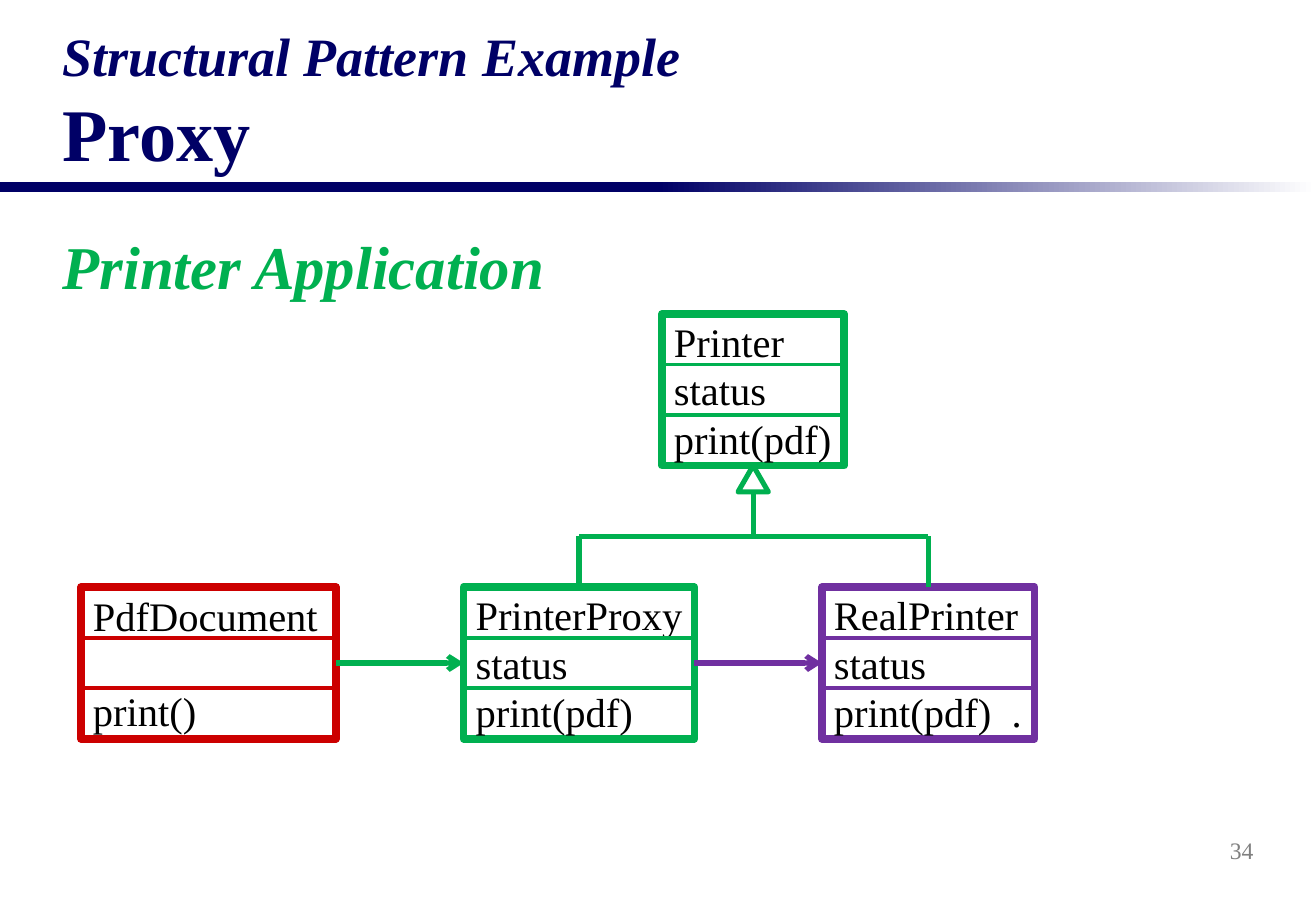
from dataclasses import dataclass

from pptx import Presentation
from pptx.dml.color import RGBColor
from pptx.enum.shapes import MSO_CONNECTOR as Connector, MSO_SHAPE as Shape
from pptx.enum.text import MSO_ANCHOR as Anchor, PP_ALIGN as Align
from pptx.oxml.ns import qn
from pptx.util import Inches, Pt
from lxml.etree import SubElement

TOP, LEFT, BOTTOM, RIGHT = range(4)  # connection sites of a rectangle


@dataclass(frozen=True)
class Theme:
    font: str = "Times New Roman"
    navy: str = "000066"
    white: str = "FFFFFF"
    black: str = "000000"
    gray: str = "808080"
    green: str = "00B050"
    purple: str = "7030A0"
    red: str = "CC0000"
    title: int = 44
    kicker: int = 32
    heading: int = 36
    body: int = 24
    number: int = 14
    border: float = 4.5
    link: float = 3
    divider: float = 2.25
    line_height: float = 1.15


class Diagram:
    """A slide laid out on a grid of 65 columns by 45 rows, six cells to the inch."""
    columns, rows, cell = 65, 45, Inches(1) / 6

    def __init__(self, theme):
        self.theme = theme
        self.presentation = Presentation()
        self.presentation.slide_width = self.grid(self.columns)
        self.presentation.slide_height = self.grid(self.rows)
        self.slide = self.presentation.slides.add_slide(self.presentation.slide_layouts[6])

    def grid(self, *cells):
        lengths = [round(count * self.cell) for count in cells]
        return lengths if len(lengths) > 1 else lengths[0]

    def set_text(self, paragraph, text, size, color, bold=False, italic=False):
        paragraph.text = text
        font = paragraph.font
        font.name, font.size, font.bold, font.italic = self.theme.font, Pt(size), bold, italic
        font.color.rgb = RGBColor.from_string(color)

    def text(self, area, lines, anchor=Anchor.TOP, align=Align.LEFT, before=0):
        frame = self.slide.shapes.add_textbox(*self.grid(*area)).text_frame
        frame.word_wrap, frame.vertical_anchor = True, anchor
        for index, line in enumerate(lines):
            paragraph = frame.add_paragraph() if index else frame.paragraphs[0]
            paragraph.alignment, paragraph.space_before = align, Pt(before)
            self.set_text(paragraph, **line)

    def shape(self, kind, area):
        shape = self.slide.shapes.add_shape(kind, *self.grid(*area))
        shape.shadow.inherit = False
        return shape

    def bar(self, area, start, end):
        bar = self.shape(Shape.RECTANGLE, area)
        bar.line.fill.background()
        bar.fill.gradient()
        bar.fill.gradient_angle = 0
        for stop, color in zip(bar.fill.gradient_stops, (start, end)):
            stop.color.rgb = RGBColor.from_string(color)

    def outline(self, kind, area, color, width):
        shape = self.shape(kind, area)
        shape.fill.background()
        shape.line.color.rgb = RGBColor.from_string(color)
        shape.line.width = Pt(width)
        return shape

    def line(self, start, end, color, width):
        line = self.slide.shapes.add_connector(
            Connector.STRAIGHT, *self.grid(*start), *self.grid(*end))
        line.line.color.rgb = RGBColor.from_string(color)
        line.line.width = Pt(width)
        SubElement(line._element.spPr, qn("a:effectLst"))
        return line

    def arrow(self, source, target, color):
        arrow = self.line((0, 0), (1, 1), color, self.theme.link)
        arrow.begin_connect(source, RIGHT)
        arrow.end_connect(target, LEFT)
        SubElement(arrow.line._get_or_add_ln(), qn("a:tailEnd"), type="arrow")

    def class_box(self, left, top, width, color, compartments):
        height = 7.5
        box = self.outline(Shape.RECTANGLE, (left, top, width, height), color, self.theme.border)
        frame = box.text_frame
        frame.word_wrap, frame.vertical_anchor = False, Anchor.MIDDLE
        skipped = 0
        paragraph = frame.paragraphs[0]
        for index, text in enumerate(compartments):
            if index:
                y = top + index * height / len(compartments)
                self.line((left, y), (left + width, y), color, self.theme.divider)
            if not text:  # an empty compartment becomes spacing
                skipped += 1
                continue
            if index:
                paragraph = frame.add_paragraph()
            paragraph.alignment = Align.LEFT
            paragraph.space_before = Pt(skipped * self.theme.body * self.theme.line_height)
            self.set_text(paragraph, text, self.theme.body, self.theme.black)
            skipped = 0
        return box

    def inheritance(self, parent, children, bar_row, color):
        def middle(box):
            return (box.left + box.width / 2) / self.cell

        center, top = middle(parent), (parent.top + parent.height) / self.cell
        width, height = 1.5, 1.3
        self.outline(Shape.ISOSCELES_TRIANGLE, (center - width / 2, top, width, height),
                     color, self.theme.link)
        self.line((center, top + height), (center, bar_row), color, self.theme.link)
        centers = [middle(child) for child in children]
        self.line((min(centers), bar_row), (max(centers), bar_row), color, self.theme.link)
        for child, x in zip(children, centers):
            branch = self.line((x, bar_row), (x, child.top / self.cell), color, self.theme.link)
            branch.end_connect(child, TOP)


def main():
    theme = Theme()
    diagram = Diagram(theme)

    # Header rule
    half = diagram.columns / 2
    diagram.bar((0, 9, half, 0.5), theme.navy, theme.navy)
    diagram.bar((half, 9, half, 0.5), theme.navy, theme.white)

    # Titles and page number
    diagram.text((2.5, 2, 60, 7), [
        dict(text="Structural Pattern Example", size=theme.kicker, color=theme.navy,
             bold=True, italic=True),
        dict(text="Proxy", size=theme.title, color=theme.navy, bold=True),
    ], Anchor.BOTTOM)
    diagram.text((2.5, 11, 60, 4.5), [
        dict(text="Printer Application", size=theme.heading, color=theme.green,
             bold=True, italic=True),
    ], before=5)
    diagram.text((49, 40.5, 13.5, 3), [
        dict(text="34", size=theme.number, color=theme.gray),
    ], Anchor.MIDDLE, Align.RIGHT)

    # Classes
    printer = diagram.class_box(32.7, 15.5, 9, theme.green, ["Printer", "status", "print(pdf)"])
    document = diagram.class_box(4, 29, 12.6, theme.red, ["PdfDocument", "", "print()"])
    proxy = diagram.class_box(22.9, 29, 11.4, theme.green,
                              ["PrinterProxy", "status", "print(pdf)"])
    real = diagram.class_box(40.6, 29, 10.5, theme.purple,
                             ["RealPrinter", "status", "print(pdf)  ."])

    # Relations
    diagram.inheritance(printer, [proxy, real], 26.5, theme.green)
    diagram.arrow(document, proxy, theme.green)
    diagram.arrow(proxy, real, theme.purple)

    diagram.presentation.save("out.pptx")


if __name__ == "__main__":
    main()
